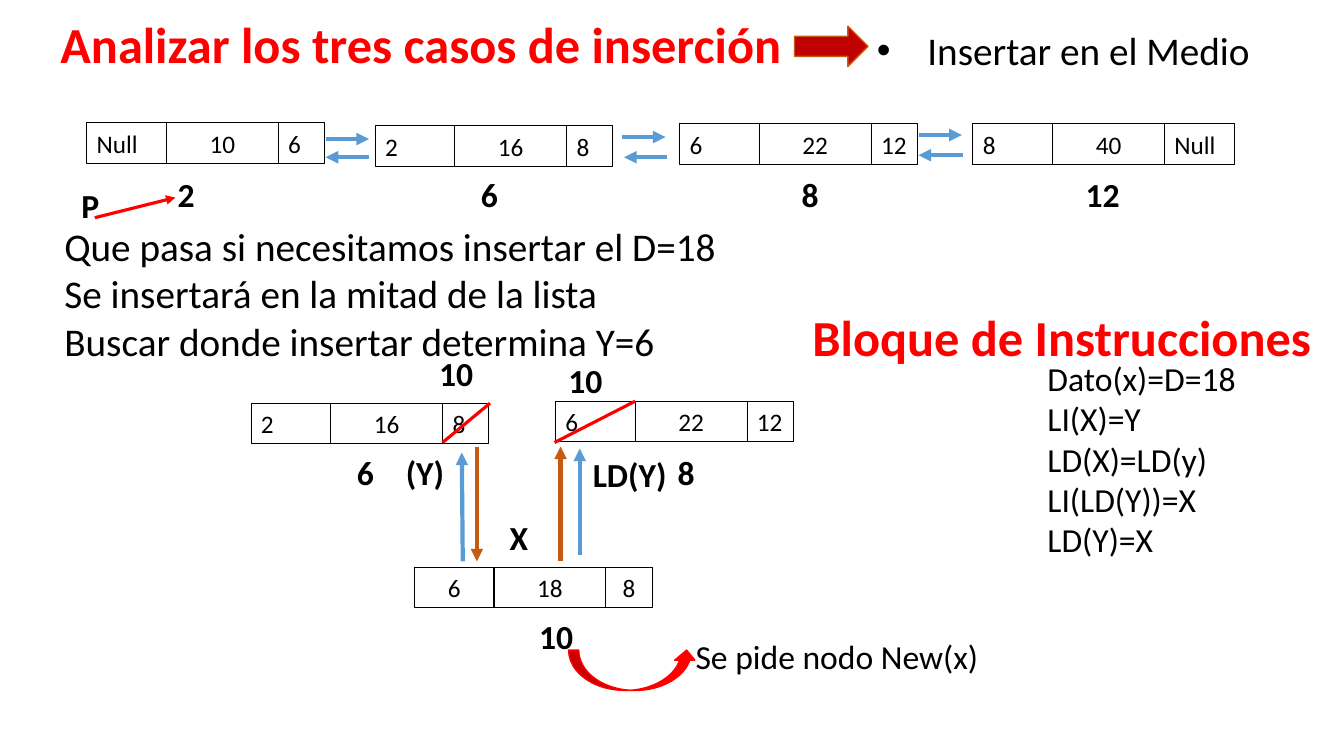
from typing import NamedTuple

from lxml import etree
from pptx import Presentation
from pptx import util as u
from pptx.dml.color import RGBColor
from pptx.enum import shapes, text
from pptx.oxml.ns import qn

PX = u.Inches(0.01)
FONT = "Calibri"
BLACK, WHITE, RED = "000000", "FFFFFF", "FF0000"
BLUE, ORANGE, DARK_RED = "5B9BD5", "C55A11", "C00000"
LEFT, CENTER = text.PP_ALIGN.LEFT, text.PP_ALIGN.CENTER
CELL_WIDTHS = (79, 111, 46)
CELL_HEIGHT = 40


class Node(NamedTuple):
    left: int
    top: int
    values: tuple[str, str, str]
    widths: tuple[int, int, int] = CELL_WIDTHS
    centered: bool = False
    white_cell: int = -1


class Label(NamedTuple):
    words: str
    left: int
    top: int
    width: int = 71


class Link(NamedTuple):
    start: tuple[int, int]
    end: tuple[int, int]
    color: str = BLUE
    weight: float = 3
    arrow: bool = True


NODES = [
    Node(86, 122, ("Null", "10", "6")),
    Node(372, 125, ("2", "16", "8")),
    Node(674, 123, ("6", "22", "12")),
    Node(965, 123, ("8", "40", "Null"), widths=(79, 111, 69)),
    Node(249, 400, ("2", "16", "8"), white_cell=2),
    Node(551, 398, ("6", "22", "12")),
    Node(411, 563, ("6", "18", "8"), centered=True),
]

LABELS = [
    # Addresses in the full list
    Label("2", 149, 168), Label("6", 450, 168),
    Label("8", 768, 168), Label("12", 1058, 168),
    Label("P", 54, 179),
    # Addresses and names around the insertion
    Label("6", 327, 443), Label("8", 645, 443),
    Label("(Y)", 386, 443), Label("LD(Y)", 575, 445, 99),
    Label("X", 479, 508), Label("10", 516, 606),
    Label("10", 545, 352), Label("10", 417, 345),
]

LINKS = [
    # Forward and backward links of the list
    Link((323, 138), (366, 138)), Link((366, 156), (323, 156)),
    Link((617, 136), (660, 136)), Link((662, 156), (619, 156)),
    Link((911, 134), (954, 134)), Link((955, 154), (911, 154)),
    # Pointer to the first node
    Link((94, 216), (174, 196), RED, 2.25),
    # Links to and from the new node
    Link((459, 557), (458, 449)), Link((575, 551), (575, 445)),
    Link((473, 443), (473, 557), ORANGE), Link((556, 557), (556, 443), ORANGE),
    # Struck-out old values
    Link((439, 439), (486, 400), RED, 2.25, arrow=False),
    Link((550, 439), (630, 398), RED, 2.25, arrow=False),
]


def rgb(color: str) -> RGBColor:
    return RGBColor.from_string(color)


def place(shape, left: int, top: int, width: int, height: int) -> None:
    shape.left, shape.top = left * PX, top * PX
    shape.width, shape.height = width * PX, height * PX


def write(shape, *lines: str, size: int = 24, color: str = BLACK,
          bold: bool = False, align=LEFT, bullet: str = "") -> None:
    frame = shape.text_frame
    frame.text = "\n".join(lines)
    frame.word_wrap = True
    frame.auto_size = text.MSO_AUTO_SIZE.SHAPE_TO_FIT_TEXT
    frame.vertical_anchor = text.MSO_ANCHOR.TOP
    for paragraph in frame.paragraphs:
        paragraph.alignment = align
        if bullet:
            props = paragraph._p.get_or_add_pPr()
            props.set("marL", str(50 * PX))
            props.set("indent", str(-50 * PX))
            etree.SubElement(props, qn("a:buFont"), typeface="Arial")
            etree.SubElement(props, qn("a:buChar"), char=bullet)
        for run in paragraph.runs:
            run.font.name, run.font.size = FONT, u.Pt(size)
            run.font.bold, run.font.color.rgb = bold, rgb(color)


def add_text(slide, left: int, top: int, width: int, height: int,
             *lines: str, **style) -> None:
    box = slide.shapes.add_textbox(0, 0, 0, 0)
    write(box, *lines, **style)
    place(box, left, top, width, height)


def add_block(slide, kind, left: int, top: int, width: int, height: int,
              fill: str, line: str, weight: float):
    block = slide.shapes.add_shape(kind, 0, 0, 0, 0)
    place(block, left, top, width, height)
    block.shadow.inherit = False
    if fill:
        block.fill.solid()
        block.fill.fore_color.rgb = rgb(fill)
    else:
        block.fill.background()
    block.line.color.rgb = rgb(line)
    block.line.width = u.Pt(weight)
    return block


def add_node(slide, node: Node) -> None:
    left = node.left
    for index, (value, width) in enumerate(zip(node.values, node.widths)):
        cell = add_block(slide, shapes.MSO_SHAPE.RECTANGLE, left, node.top,
                         width, CELL_HEIGHT,
                         WHITE if index == node.white_cell else "", BLACK, 0.75)
        middle = node.centered or index == 1
        write(cell, value, size=18, align=CENTER if middle else LEFT)
        left += width


def add_link(slide, link: Link) -> None:
    ends = [value * PX for value in link.start + link.end]
    connector = slide.shapes.add_connector(shapes.MSO_CONNECTOR.STRAIGHT, *ends)
    connector.line.color.rgb = rgb(link.color)
    connector.line.width = u.Pt(link.weight)
    if link.arrow:
        etree.SubElement(connector.line._get_or_add_ln(), qn("a:tailEnd"),
                         type="triangle")
    etree.SubElement(connector._element.spPr, qn("a:effectLst"))


def main() -> None:
    deck = Presentation()
    deck.slide_width, deck.slide_height = 1333 * PX, 750 * PX
    slide = deck.slides.add_slide(deck.slide_layouts[5])

    # Title and the case shown
    title = slide.shapes.title
    write(title, "Analizar los tres casos de inserción",
          size=36, color=RED, bold=True)
    place(title, 50, 8, 746, 71)
    add_text(slide, 860, 21, 440, 57, "Insertar en el Medio",
             size=28, bullet="•")
    add_block(slide, shapes.MSO_SHAPE.RIGHT_ARROW, 788, 26, 73, 40,
              DARK_RED, ORANGE, 1)

    # Question and instructions
    add_text(slide, 54, 216, 1224, 151,
             "Que pasa si necesitamos insertar el D=18",
             "Se insertará en la mitad de la lista",
             "Buscar donde insertar determina Y=6", size=28)
    add_text(slide, 796, 299, 532, 71, "Bloque de Instrucciones",
             size=36, color=RED, bold=True)
    add_text(slide, 1029, 350, 208, 212, "Dato(x)=D=18", "LI(X)=Y",
             "LD(X)=LD(y)", "LI(LD(Y))=X", "LD(Y)=X")

    # Linked list
    for node in NODES:
        add_node(slide, node)
    for label in LABELS:
        add_text(slide, label.left, label.top, label.width, 50, label.words,
                 bold=True, align=CENTER)
    for link in LINKS:
        add_link(slide, link)

    # Request for the new node
    add_text(slide, 680, 626, 368, 50, "Se pide nodo New(x)")
    add_block(slide, shapes.MSO_SHAPE.CURVED_UP_ARROW, 564, 645, 127, 40,
              RED, RED, 1)

    deck.save("out.pptx")


if __name__ == "__main__":
    main()
